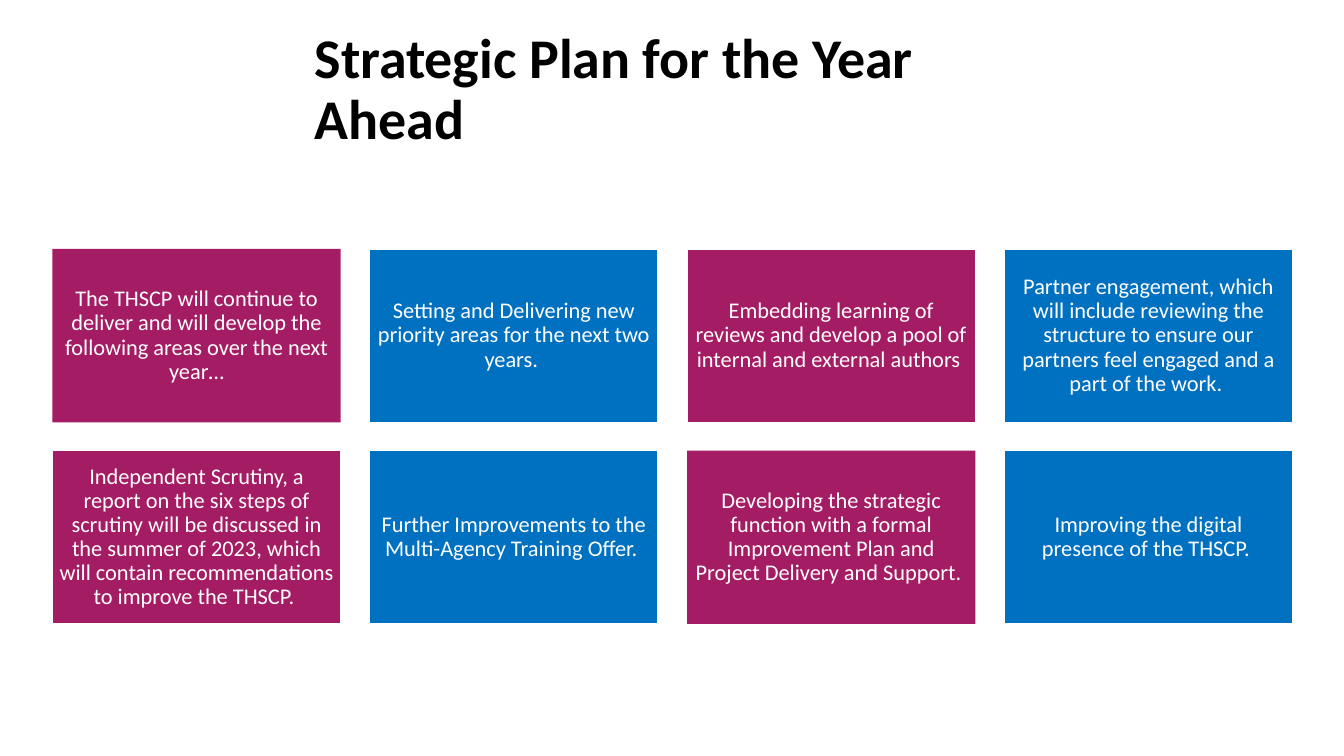
from pptx import Presentation
from pptx.dml.color import RGBColor
from pptx.enum.shapes import MSO_SHAPE
from pptx.enum.text import MSO_ANCHOR, MSO_AUTO_SIZE, PP_ALIGN
from pptx.util import Inches, Pt

RECTANGLE = MSO_SHAPE.RECTANGLE
MIDDLE = MSO_ANCHOR.MIDDLE
NO_AUTOFIT = MSO_AUTO_SIZE.NONE
LEFT, CENTER = PP_ALIGN.LEFT, PP_ALIGN.CENTER

BLACK = RGBColor(0x00, 0x00, 0x00)
WHITE = RGBColor(0xFF, 0xFF, 0xFF)
MAGENTA = RGBColor(0xA4, 0x1C, 0x64)
BLUE = RGBColor(0x00, 0x70, 0xC0)

TITLE_ONLY = 5
COLUMNS = 4
GRID_LEFT, GRID_TOP = 0.52, 2.47
CARD_WIDTH, CARD_HEIGHT = 2.86, 1.72
COLUMN_STEP, ROW_STEP = 3.147, 2
CARD_INSET = Inches(0.07)

PLAN_AREAS = [
    ("The THSCP will continue to deliver and will develop the following areas over the next year…", False),
    ("Setting and Delivering new priority areas for the next two years. ", True),
    ("Embedding learning of reviews and develop a pool of internal and external authors ", True),
    ("Partner engagement, which will include reviewing the structure to ensure our partners "
     "feel engaged and a part of the work. ", True),
    ("Independent Scrutiny, a report on the six steps of scrutiny will be discussed in the "
     "summer of 2023, which will contain recommendations to improve the THSCP. ", True),
    ("Further Improvements to the Multi-Agency Training Offer. ", True),
    ("Developing the strategic function with a formal Improvement Plan and Project Delivery "
     "and Support. ", False),
    ("Improving the digital presence of the THSCP. ", True),
]


def set_attributes(target, values):
    for attribute, value in values.items():
        setattr(target, attribute, value)


def write_text(frame, text, alignment, color, font_format):
    set_attributes(frame, {"word_wrap": True, "auto_size": NO_AUTOFIT, "vertical_anchor": MIDDLE})
    paragraph = frame.paragraphs[0]
    set_attributes(paragraph, {"alignment": alignment, "line_spacing": 0.9})
    run = paragraph.add_run()
    run.text = text
    set_attributes(run.font, {"name": "Calibri", **font_format})
    run.font.color.rgb = color


def add_title(slide, text):
    title = slide.shapes.title
    set_attributes(title, {
        "left": Inches(3.02), "top": Inches(0.28),
        "width": Inches(7.5), "height": Inches(1.24),
    })
    write_text(title.text_frame, text, LEFT, BLACK, {"size": Pt(40), "bold": True})


def add_card(slide, position, text, outlined):
    row, column = divmod(position, COLUMNS)
    card = slide.shapes.add_shape(
        RECTANGLE,
        Inches(GRID_LEFT + column * COLUMN_STEP), Inches(GRID_TOP + row * ROW_STEP),
        Inches(CARD_WIDTH), Inches(CARD_HEIGHT),
    )
    card.shadow.inherit = False
    card.fill.solid()
    card.fill.fore_color.rgb = BLUE if column % 2 else MAGENTA
    if outlined:
        card.line.color.rgb = WHITE
        card.line.width = Pt(1)
    else:
        card.line.fill.background()
    sides = ("left", "top", "right", "bottom")
    set_attributes(card.text_frame, {f"margin_{side}": CARD_INSET for side in sides})
    write_text(card.text_frame, text, CENTER, WHITE, {"size": Pt(16)})


def main():
    presentation = Presentation()
    set_attributes(presentation, {"slide_width": Inches(13.33), "slide_height": Inches(7.5)})
    slide = presentation.slides.add_slide(presentation.slide_layouts[TITLE_ONLY])
    add_title(slide, "Strategic Plan for the Year Ahead")
    for position, (text, outlined) in enumerate(PLAN_AREAS):
        add_card(slide, position, text, outlined)
    presentation.save("out.pptx")


if __name__ == "__main__":
    main()
